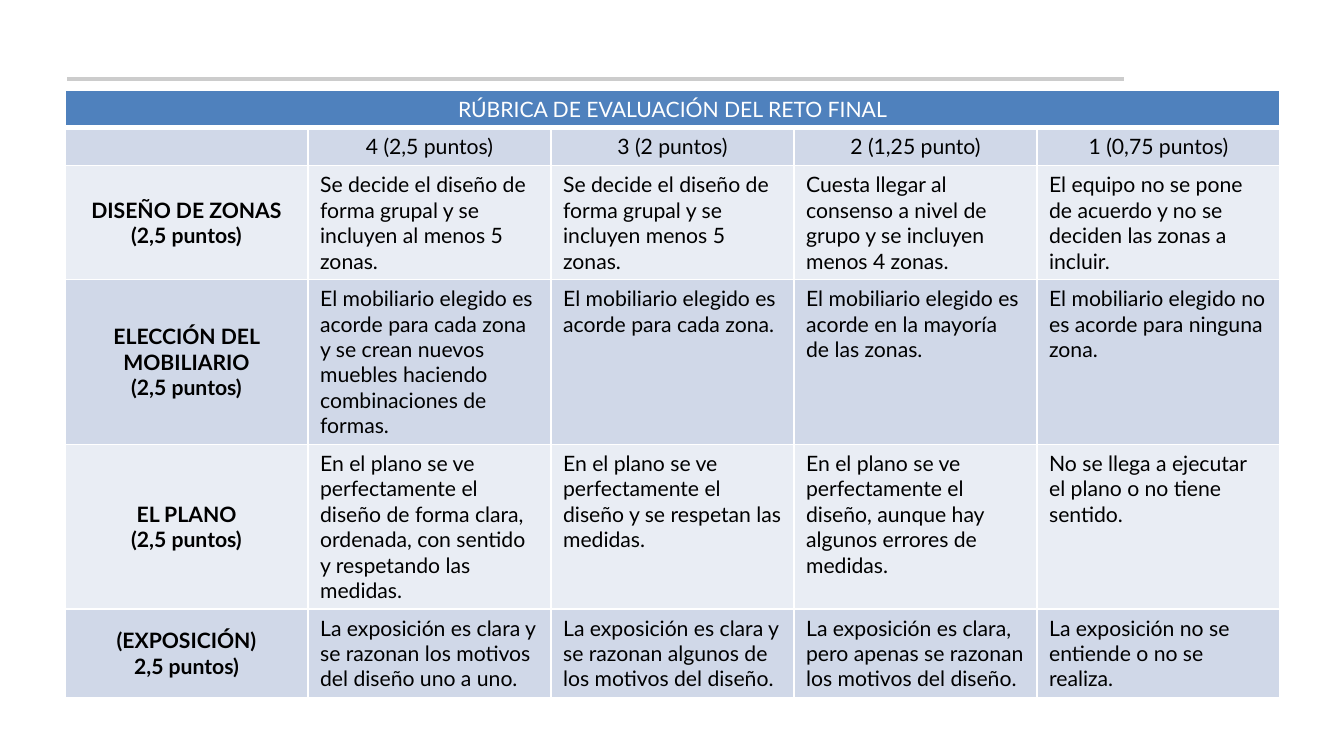
from lxml import etree
from pptx import Presentation, util as u
from pptx.dml.color import RGBColor
from pptx.enum import shapes, text
from pptx.oxml.ns import qn

PX = 914400 / 122
BLUE, BAND_DARK, BAND_LIGHT = "4F81BD", "D0D8E8", "E9EDF4"
FONT_SIZE = 12.5

TITLE = "RÚBRICA DE EVALUACIÓN DEL RETO FINAL"
RUBRIC = [
    [TITLE, "", "", "", ""],
    ["", "4 (2,5 puntos)", "3 (2 puntos)", "2 (1,25 punto)", "1 (0,75 puntos)"],
    ["DISEÑO DE ZONAS\n(2,5 puntos)",
     "Se decide el diseño de forma grupal y se incluyen al menos 5 zonas.",
     "Se decide el diseño de forma grupal y se incluyen menos 5 zonas.",
     "Cuesta llegar al consenso a nivel de grupo y se incluyen menos 4 zonas.",
     "El equipo no se pone de acuerdo y no se deciden las zonas a incluir."],
    ["ELECCIÓN DEL MOBILIARIO\n(2,5 puntos)",
     "El mobiliario elegido es acorde para cada zona y se crean nuevos muebles "
     "haciendo combinaciones de formas.",
     "El mobiliario elegido es acorde para cada zona.",
     "El mobiliario elegido es acorde en la mayoría de las zonas.",
     "El mobiliario elegido no es acorde para ninguna zona."],
    ["EL PLANO\n(2,5 puntos)",
     "En el plano se ve perfectamente el diseño de forma clara, ordenada, "
     "con sentido y respetando las medidas.",
     "En el plano se ve perfectamente el diseño y se respetan las medidas.",
     "En el plano se ve perfectamente el diseño, aunque hay algunos errores de medidas.",
     "No se llega a ejecutar el plano o no tiene sentido."],
    ["(EXPOSICIÓN)\n2,5 puntos)",
     "La exposición es clara y se razonan los motivos del diseño uno a uno.",
     "La exposición es clara y se razonan algunos de los motivos del diseño.",
     "La exposición es clara, pero apenas se razonan los motivos del diseño.",
     "La exposición no se entiende o no se realiza."],
]
ROW_HEIGHTS = [37, 37, 113, 164, 164, 88]
COLUMN_WIDTH = 243


def px(length):
    """Turn pixels into EMU."""
    return u.Emu(round(length * PX))


def color(value):
    return RGBColor.from_string(value)


deck = Presentation()
deck.slide_width, deck.slide_height = px(1344), px(756)
slide = deck.slides.add_slide(deck.slide_layouts[6])

rule = slide.shapes.add_connector(
    shapes.MSO_CONNECTOR.STRAIGHT, px(1124), px(79), px(67), px(79))
rule.line.color.rgb = color("CCCCCC")
rule.line.width = u.Pt(0)
etree.SubElement(rule._element.spPr, qn("a:effectLst"))

table = slide.shapes.add_table(
    len(RUBRIC), len(RUBRIC[0]), px(65), px(90),
    px(COLUMN_WIDTH * len(RUBRIC[0])), px(sum(ROW_HEIGHTS))).table
for column in table.columns:
    column.width = px(COLUMN_WIDTH)
for row, height in zip(table.rows, ROW_HEIGHTS):
    row.height = px(height)
table.cell(0, 0).merge(table.cell(0, len(RUBRIC[0]) - 1))

for r, entries in enumerate(RUBRIC):
    for c, entry in enumerate(entries):
        cell = table.cell(r, c)
        is_criterion = r > 1 and c == 0

        borders = cell._tc.get_or_add_tcPr()
        for side in ("lnL", "lnR", "lnT", "lnB"):
            width = 3 if r == 0 and side == "lnB" else 1
            border = etree.SubElement(borders, qn(f"a:{side}"), w=str(u.Pt(width)))
            paint = etree.SubElement(border, qn("a:solidFill"))
            etree.SubElement(paint, qn("a:srgbClr"), val="FFFFFF")
        cell.fill.solid()
        cell.fill.fore_color.rgb = color(
            BLUE if r == 0 else BAND_DARK if r % 2 else BAND_LIGHT)
        if is_criterion:
            cell.vertical_anchor = text.MSO_ANCHOR.MIDDLE

        for i, line in enumerate(entry.split("\n")):
            frame = cell.text_frame
            paragraph = frame.add_paragraph() if i else frame.paragraphs[0]
            if not line:
                etree.SubElement(paragraph._p, qn("a:endParaRPr"),
                                 sz=str(int(FONT_SIZE * 100)))
                continue
            centered = r < 2 or c == 0
            paragraph.alignment = text.PP_ALIGN.CENTER if centered else text.PP_ALIGN.LEFT
            run = paragraph.add_run()
            run.text = line
            run.font.name = "Lato"
            run.font.size = u.Pt(FONT_SIZE)
            run.font.bold = is_criterion
            run.font.color.rgb = color("FFFFFF" if r == 0 else "000000")

deck.save("out.pptx")
